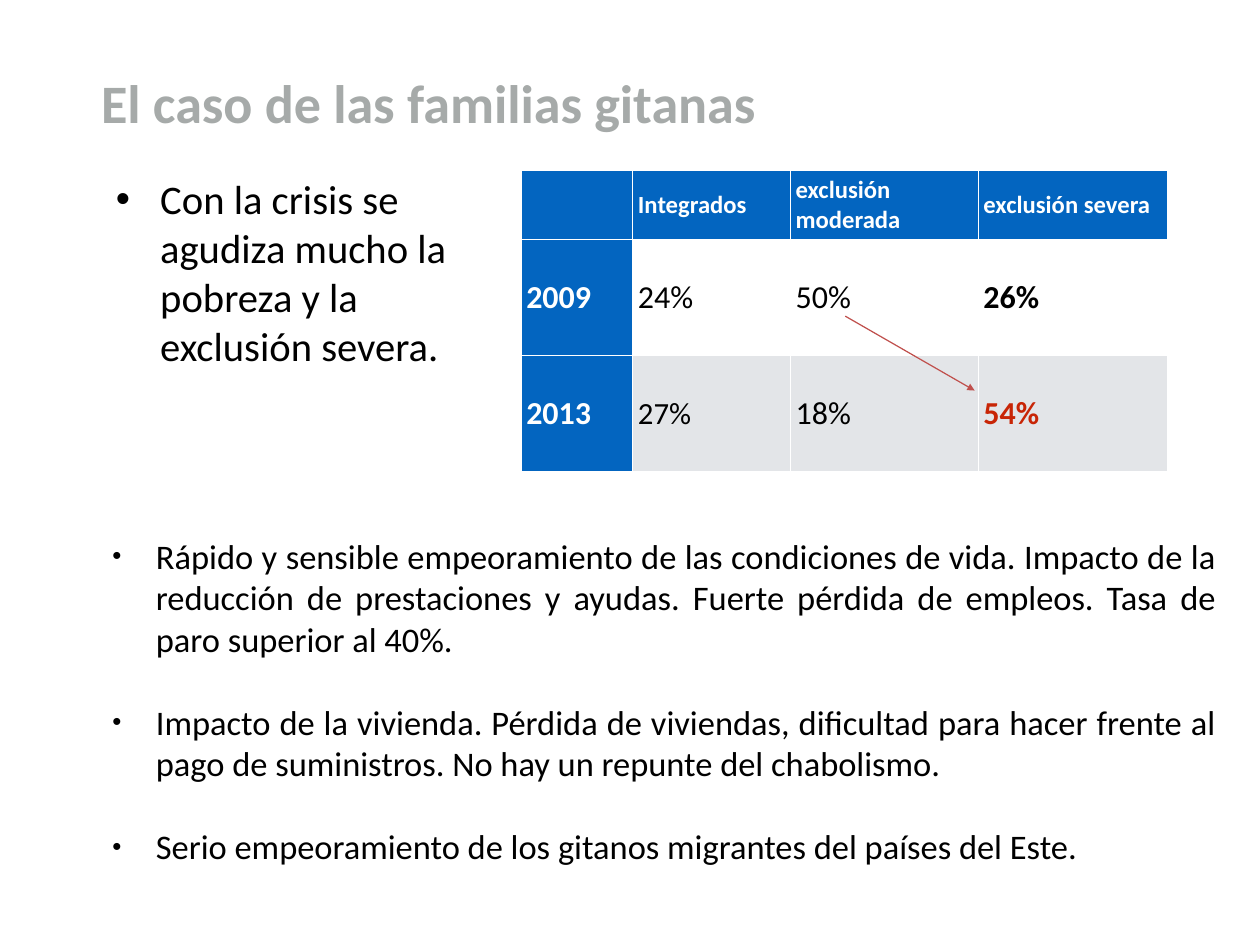
import pptx
import pptx.dml.color
import pptx.enum.shapes
import pptx.enum.text
import pptx.oxml.ns
import pptx.util
from lxml import etree

Inches = pptx.util.Inches
ALIGN = pptx.enum.text.PP_ALIGN
ANCHOR = pptx.enum.text.MSO_ANCHOR
BLUE, WHITE, GREY, BLACK, RED = "0365C0", "FFFFFF", "E3E5E8", "000000", "C82506"
HEADINGS = ["", "Integrados", "exclusión\vmoderada", "exclusión severa"]
YEARS = [["2009", "24%", "50%", "26%"], ["2013", "27%", "18%", "54%"]]
CONSEQUENCES = [
    "Rápido y sensible empeoramiento de las condiciones de vida. Impacto de la "
    "reducción de prestaciones y ayudas. Fuerte pérdida de empleos. Tasa de paro "
    "superior al 40%.",
    "Impacto de la vivienda. Pérdida de viviendas, dificultad para hacer frente al "
    "pago de suministros. No hay un repunte del chabolismo.",
    "Serio empeoramiento de los gitanos migrantes del países del Este.",
]


def color(value):
    """Return the colour for a hex string."""
    return pptx.dml.color.RGBColor.from_string(value)


def add_child(parent, tag, **attributes):
    """Append a DrawingML element to a parent element."""
    child = etree.SubElement(parent, pptx.oxml.ns.qn(tag))
    for key, value in attributes.items():
        child.set(key, str(value))
    return child


def write(paragraph, text, size, ink=BLACK, bold=False, align=ALIGN.LEFT,
          before=0, indent=0, bullet_size=100):
    """Fill a paragraph with formatted text, bulleted when it has an indent."""
    paragraph.text = text
    paragraph.alignment = align
    paragraph.space_before = pptx.util.Pt(before)
    if indent:
        properties = paragraph._p.get_or_add_pPr()
        properties.set("marL", str(Inches(indent)))
        properties.set("indent", str(-Inches(indent)))
        add_child(properties, "a:buSzPct", val=bullet_size * 1000)
        add_child(properties, "a:buFont", typeface="Arial")
        add_child(properties, "a:buChar", char="•")
    for run in paragraph.runs:
        run.font.name = "Calibri"
        run.font.size = pptx.util.Pt(size)
        run.font.bold = bold
        run.font.color.rgb = color(ink)


def set_margins(holder, margin):
    """Give a cell or text frame the same margin on every side."""
    holder.margin_left = holder.margin_right = Inches(margin)
    holder.margin_top = holder.margin_bottom = Inches(margin)


def place_title(slide, left, top, width, height):
    """Place the slide title in its box."""
    title = slide.shapes.title
    title.left, title.top = Inches(left), Inches(top)
    title.width, title.height = Inches(width), Inches(height)
    frame = title.text_frame
    frame.auto_size = pptx.enum.text.MSO_AUTO_SIZE.NONE
    frame.vertical_anchor = ANCHOR.BOTTOM
    write(frame.paragraphs[0], "El caso de las familias gitanas", 44, "A6AAA9", True)


def place_bullets(slide, left, top, width, height, texts, margin=None,
                  anchor=ANCHOR.TOP, gap=0, **style):
    """Place a bulleted list in its box."""
    box = slide.shapes.add_textbox(Inches(left), Inches(top), Inches(width), Inches(height))
    frame = box.text_frame
    frame.word_wrap = True
    frame.vertical_anchor = anchor
    if margin is not None:
        set_margins(frame, margin)
    for index, text in enumerate(texts):
        paragraph = frame.add_paragraph() if index else frame.paragraphs[0]
        write(paragraph, text, before=gap if index else 0, **style)


def place_exclusion_table(slide, left, top, width, height):
    """Place the exclusion table and the arrow from 50% to 54%."""
    rows = [HEADINGS] + YEARS
    table = slide.shapes.add_table(len(rows), len(HEADINGS), Inches(left), Inches(top),
                                   Inches(width), Inches(height)).table
    table.first_row = table.horz_banding = False
    for column, share in zip(table.columns, (1.26, 1.78, 2.12, 2.14)):
        column.width = Inches(share)
    for row, share in zip(table.rows, (0.78, 1.31, 1.31)):
        row.height = Inches(share)
    for r, texts in enumerate(rows):
        for c, text in enumerate(texts):
            cell = table.cell(r, c)
            header = r == 0 or c == 0
            cell.fill.solid()
            cell.fill.fore_color.rgb = color(BLUE if header else (WHITE, GREY)[r - 1])
            cell.vertical_anchor = ANCHOR.MIDDLE
            set_margins(cell, 0.06)
            ink = WHITE if header else RED if text == "54%" else BLACK
            size = 20 if r == 0 else 25 if text == "27%" else 26
            write(cell.text_frame.paragraphs[0], text, size, ink, header or c == 3)
    arrow = slide.shapes.add_connector(
        pptx.enum.shapes.MSO_CONNECTOR.STRAIGHT, Inches(left + 3.66), Inches(top + 1.65),
        Inches(left + 5.12), Inches(top + 2.49))
    arrow.line.color.rgb = color("C0504D")
    arrow.line.width = pptx.util.Pt(1)
    add_child(arrow.line._get_or_add_ln(), "a:tailEnd", type="triangle")
    add_child(arrow._element.spPr, "a:effectLst")


def main():
    """Build and save the slide."""
    deck = pptx.Presentation()
    deck.slide_width, deck.slide_height = Inches(14.22), Inches(10.67)
    slide = deck.slides.add_slide(deck.slide_layouts.get_by_name("Title Only"))
    place_title(slide, 1.04, 0.36, 12.14, 1.21)
    place_bullets(slide, 1.21, 1.92, 4.51, 3.62,
                  ["Con la crisis se agudiza mucho la pobreza y la exclusión severa."],
                  size=33, indent=0.5)
    place_exclusion_table(slide, 5.88, 1.92, 7.3, 3.4)
    place_bullets(slide, 1.21, 5.97, 12.57, 3.89, CONSEQUENCES, margin=0.06,
                  anchor=ANCHOR.MIDDLE, gap=34, size=28, indent=0.49,
                  align=ALIGN.JUSTIFY, bullet_size=75)
    deck.save("out.pptx")


if __name__ == "__main__":
    main()
